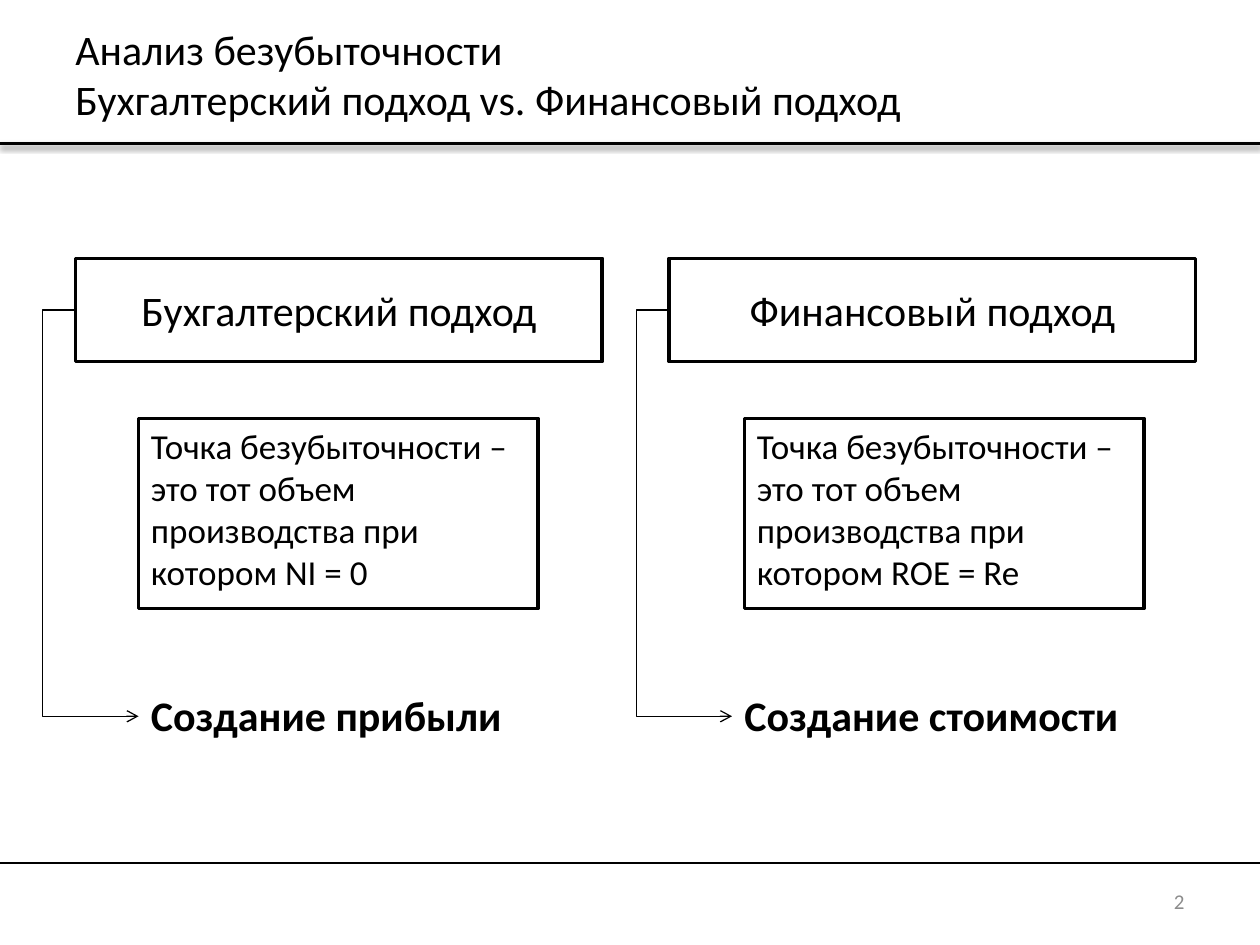
import pptx
import pptx.dml.color
import pptx.enum.shapes
import pptx.enum.text
import pptx.oxml
import pptx.oxml.ns
import pptx.util
from pptx.util import Inches

TITLE = "Анализ безубыточности\vБухгалтерский подход vs. Финансовый подход"
PAGE_NUMBER = "2"
DEFINITION = "Точка безубыточности – это тот объем производства при котором "
APPROACHES = [
    {"left": 0.6, "definition_left": 1.1, "outcome_width": 3.17,
     "heading": "Бухгалтерский подход", "condition": "NI = 0",
     "outcome": "Создание прибыли"},
    {"left": 5.31, "definition_left": 5.91, "outcome_width": 3.36,
     "heading": "Финансовый подход", "condition": "ROE = Re",
     "outcome": "Создание стоимости"},
]
THEME = {
    "font": "Calibri", "ink": "000000", "paper": "FFFFFF", "muted": "8C8C8C",
    "large": 24, "body": 20, "small": 12, "thick": 2, "thin": 0.75,
}
HEADING_TOP, HEADING_WIDTH, HEADING_HEIGHT = 2.05, 4.18, 0.82
DEFINITION_TOP, DEFINITION_WIDTH, DEFINITION_HEIGHT = 3.32, 3.17, 1.51
OUTCOME_TOP, OUTCOME_HEIGHT, OUTCOME_INDENT = 5.42, 0.53, 0.5
ELBOW_BEND = -0.52

ALIGN = pptx.enum.text.PP_ALIGN
ANCHOR = pptx.enum.text.MSO_ANCHOR
CONNECTOR = pptx.enum.shapes.MSO_CONNECTOR


def color(name):
    return pptx.dml.color.RGBColor.from_string(THEME[name])


def drawing_xml(markup):
    """Parse markup whose root is missing only the drawing namespace."""
    namespace = pptx.oxml.ns.nsdecls("a")
    return pptx.oxml.parse_xml(markup.replace(">", f" {namespace}>", 1))


def write(shape, text, size="large", ink="ink", align=ALIGN.LEFT,
          anchor=ANCHOR.TOP, bold=False, wrap=True):
    frame = shape.text_frame
    frame.word_wrap = wrap
    frame.vertical_anchor = anchor
    para = frame.paragraphs[0]
    para.text = text
    para.alignment = align
    para.font.name = THEME["font"]
    para.font.size = pptx.util.Pt(THEME[size])
    para.font.bold = bold
    para.font.color.rgb = color(ink)


def add_text(page, area, text, **style):
    box = page.shapes.add_textbox(*map(Inches, area))
    write(box, text, **style)


def add_box(page, area, text, **style):
    box = page.shapes.add_shape(
        pptx.enum.shapes.MSO_SHAPE.RECTANGLE, *map(Inches, area))
    box.shadow.inherit = False
    box.fill.solid()
    box.fill.fore_color.rgb = color("paper")
    box.line.color.rgb = color("ink")
    box.line.width = pptx.util.Pt(THEME["thick"])
    write(box, text, **style)


def add_line(page, start, end, weight="thin", kind=CONNECTOR.STRAIGHT,
             effects="<a:effectLst></a:effectLst>"):
    line = page.shapes.add_connector(kind, *map(Inches, (*start, *end)))
    line.line.color.rgb = color("ink")
    line.line.width = pptx.util.Pt(THEME[weight])
    line._element.spPr.append(drawing_xml(effects))
    return line


def add_elbow_arrow(page, start, end):
    """Draw an open arrow that leaves to the left and returns to the right."""
    arrow = add_line(page, start, end, kind=CONNECTOR.ELBOW)
    adjustments = arrow._element.spPr.prstGeom.get_or_add_avLst()
    bend = round(ELBOW_BEND * 100000)
    adjustments.append(drawing_xml(f'<a:gd name="adj1" fmla="val {bend}"></a:gd>'))
    arrow.line._get_or_add_ln().append(
        drawing_xml('<a:tailEnd type="arrow"></a:tailEnd>'))


def add_frame(page):
    shadow = (
        '<a:effectLst><a:outerShdw blurRad="39370" dist="20320" dir="5400000" '
        f'rotWithShape="0"><a:srgbClr val="{THEME["ink"]}">'
        '<a:alpha val="38000"/></a:srgbClr></a:outerShdw></a:effectLst>')
    add_line(page, (0, 6.85), (10, 6.85))
    add_line(page, (0, 1.14), (10, 1.14), weight="thick", effects=shadow)
    add_text(page, (0.5, 0.16, 9, 0.85), TITLE, anchor=ANCHOR.MIDDLE)
    add_text(page, (7.17, 6.95, 2.33, 0.4), PAGE_NUMBER, size="small",
             ink="muted", align=ALIGN.RIGHT, anchor=ANCHOR.MIDDLE)


def add_approach(page, approach):
    left = approach["left"]
    outcome_left = left + OUTCOME_INDENT
    add_box(page, (left, HEADING_TOP, HEADING_WIDTH, HEADING_HEIGHT),
            approach["heading"], align=ALIGN.CENTER, anchor=ANCHOR.MIDDLE)
    add_box(page, (approach["definition_left"], DEFINITION_TOP,
                   DEFINITION_WIDTH, DEFINITION_HEIGHT),
            DEFINITION + approach["condition"], size="body")
    add_text(page, (outcome_left, OUTCOME_TOP, approach["outcome_width"],
                    OUTCOME_HEIGHT),
             approach["outcome"], bold=True, wrap=False)
    add_elbow_arrow(page, (left, HEADING_TOP + HEADING_HEIGHT / 2),
                    (outcome_left, OUTCOME_TOP + OUTCOME_HEIGHT / 2))


def main():
    deck = pptx.Presentation()
    deck.slide_width, deck.slide_height = Inches(10), Inches(7.5)
    page = deck.slides.add_slide(deck.slide_layouts[6])
    add_frame(page)
    for approach in APPROACHES:
        add_approach(page, approach)
    deck.save("out.pptx")


if __name__ == "__main__":
    main()
